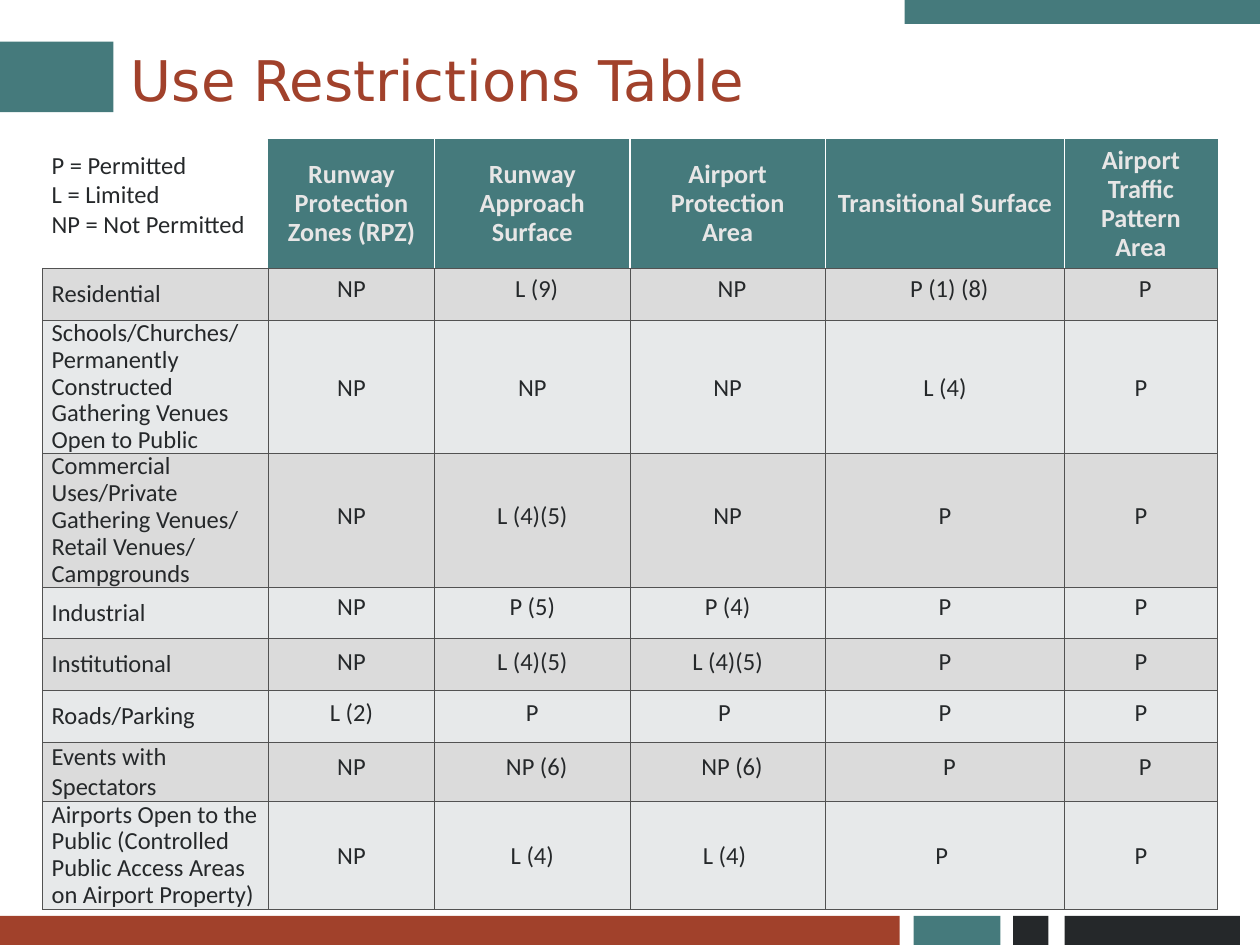
from dataclasses import dataclass

from lxml.etree import SubElement
from pptx import Presentation
from pptx.dml.color import RGBColor
from pptx.enum.shapes import MSO_SHAPE
from pptx.enum.text import MSO_ANCHOR, PP_ALIGN
from pptx.oxml.ns import qn
from pptx.util import Inches, Pt


@dataclass(frozen=True)
class Theme:
    teal: str = "457A7C"
    rust: str = "A1412B"
    ink: str = "25282A"
    white: str = "FFFFFF"
    header_text: str = "E7E6E6"
    grid_line: str = "525252"
    bands: tuple = ("DBDBDB", "E7E9EA")
    title_font: str = "DejaVu Sans"
    body_font: str = "Calibri"
    title_size: int = 32
    header_size: int = 15
    body_size: int = 14


theme = Theme()


def write(frame, text, font=theme.body_font, size=theme.body_size, color=theme.ink,
          bold=False, align=PP_ALIGN.LEFT, spacing=1.0):
    for number, line in enumerate(text.split("\n")):
        paragraph = frame.add_paragraph() if number else frame.paragraphs[0]
        paragraph.alignment = align
        paragraph.line_spacing = spacing
        run = paragraph.add_run()
        run.text = line
        run.font.name = font
        run.font.size = Pt(size)
        run.font.bold = bold
        run.font.color.rgb = RGBColor.from_string(color)


def outline(cell, **sides):
    properties = cell._tc.get_or_add_tcPr()
    for side in "LRTB":
        color, width = sides.get(side, (None, 0))
        line = SubElement(properties, qn(f"a:ln{side}"), w=str(Pt(width)))
        if color:
            fill = SubElement(line, qn("a:solidFill"))
            SubElement(fill, qn("a:srgbClr"), val=color)
        else:
            SubElement(line, qn("a:noFill"))


presentation = Presentation()
presentation.slide_width = Inches(10)
presentation.slide_height = Inches(7.5)
column = presentation.slide_width // 1000
row = presentation.slide_height // 750
slide = presentation.slides.add_slide(presentation.slide_layouts[6])

footer_top, footer_height = 727, 23
bars = [
    (718, 0, 282, 19, theme.teal),
    (804, footer_top, 28, footer_height, theme.ink),
    (725, footer_top, 69, footer_height, theme.teal),
    (845, footer_top, 139, footer_height, theme.ink),
    (0, footer_top, 714, footer_height, theme.rust),
    (0, 33, 90, 56, theme.teal),
]
for left, top, width, height, color in bars:
    bar = slide.shapes.add_shape(MSO_SHAPE.RECTANGLE, left * column, top * row,
                                 width * column, height * row)
    bar.shadow.inherit = False
    bar.fill.solid()
    bar.fill.fore_color.rgb = RGBColor.from_string(color)
    bar.line.fill.background()

title = slide.shapes.add_textbox(94 * column, 13 * row, 839 * column, 106 * row).text_frame
title.word_wrap = True
title.vertical_anchor = MSO_ANCHOR.MIDDLE
write(title, "Use Restrictions Table", font=theme.title_font, size=theme.title_size,
      color=theme.rust, spacing=0.9)

zones = ["", "Runway Protection Zones (RPZ)", "Runway Approach Surface",
         "Airport Protection Area", "Transitional Surface", "Airport Traffic Pattern Area"]
uses = [
    (41, 1.0, Pt(11.8), ["Residential", "NP", "L (9)", "NP", "P (1) (8)", "P"]),
    (106, 0.9, 1.07, ["Schools/Churches/\nPermanently Constructed Gathering Venues Open to Public",
                      "NP", "NP", "NP", "L (4)", "P"]),
    (106, 0.9, Pt(12.1), ["Commercial Uses/Private Gathering Venues/\nRetail Venues/\nCampgrounds",
                          "NP", "L (4)(5)", "NP", "P", "P"]),
    (41, 1.0, Pt(10.7), ["Industrial", "NP", "P (5)", "P (4)", "P", "P"]),
    (41, 1.0, Pt(11.8), ["Institutional", "NP", "L (4)(5)", "L (4)(5)", "P", "P"]),
    (41, 1.0, Pt(11.8), ["Roads/Parking", "L (2)", "P", "P", "P", "P"]),
    (47, 1.0, Pt(11.8), ["Events with Spectators", "NP", "NP (6)", "NP (6)", "P", "P"]),
    (86, 0.9, 1.07, ["Airports Open to the Public (Controlled Public Access Areas on Airport Property)",
                     "NP", "L (4)", "L (4)", "P", "P"]),
]
shifted_right = {(use, zone) for use in (1, 7) for zone in (2, 3, 4, 5)}
shifted_left = {(6, 3), (8, 3), (8, 4)}
lowered_uses = {5, 6}
zone_widths = [179, 132, 155, 155, 190, 121]
use_heights = [102] + [use[0] for use in uses]

restrictions = slide.shapes.add_table(
    len(use_heights), len(zones), 34 * column, 111 * row,
    sum(zone_widths) * column, sum(use_heights) * row).table
restrictions.first_row = False
restrictions.horz_banding = False
for zone, width in enumerate(zone_widths):
    restrictions.columns[zone].width = width * column
for use, height in enumerate(use_heights):
    restrictions.rows[use].height = height * row

thin = (theme.grid_line, 0.5)
teal_edge = (theme.teal, 1)
white_edge = (theme.white, 1)
last_zone = len(zones) - 1

for zone, heading in enumerate(zones):
    cell = restrictions.cell(0, zone)
    if not heading:
        outline(cell, R=teal_edge, B=thin)
        cell.fill.background()
        continue
    outline(cell, L=teal_edge if zone == 1 else white_edge,
            R=teal_edge if zone == last_zone else white_edge, T=teal_edge, B=thin)
    cell.fill.solid()
    cell.fill.fore_color.rgb = RGBColor.from_string(theme.teal)
    cell.vertical_anchor = MSO_ANCHOR.MIDDLE
    write(cell.text_frame, heading, size=theme.header_size, color=theme.header_text,
          bold=True, align=PP_ALIGN.CENTER, spacing=0.9)

for use, (height, label_spacing, rule_spacing, entries) in enumerate(uses, start=1):
    for zone, entry in enumerate(entries):
        cell = restrictions.cell(use, zone)
        outline(cell, L=thin, R=thin, T=thin, B=thin)
        cell.fill.solid()
        cell.fill.fore_color.rgb = RGBColor.from_string(theme.bands[(use - 1) % 2])
        cell.vertical_anchor = MSO_ANCHOR.MIDDLE
        cell.margin_left = 7 * column if zone == 0 or (use, zone) in shifted_right else 0
        cell.margin_right = 5 * column if (use, zone) in shifted_left else 0
        cell.margin_top = 3 * row if zone and use in lowered_uses else 0
        cell.margin_bottom = 0
        write(cell.text_frame, entry,
              align=PP_ALIGN.CENTER if zone else PP_ALIGN.LEFT,
              spacing=rule_spacing if zone else label_spacing)

legend = slide.shapes.add_textbox(24 * column, 114 * row, 251 * column, 81 * row).text_frame
legend.word_wrap = True
legend.margin_left = 17 * column
write(legend, "P = Permitted\nL = Limited\nNP = Not Permitted")

presentation.save("out.pptx")
